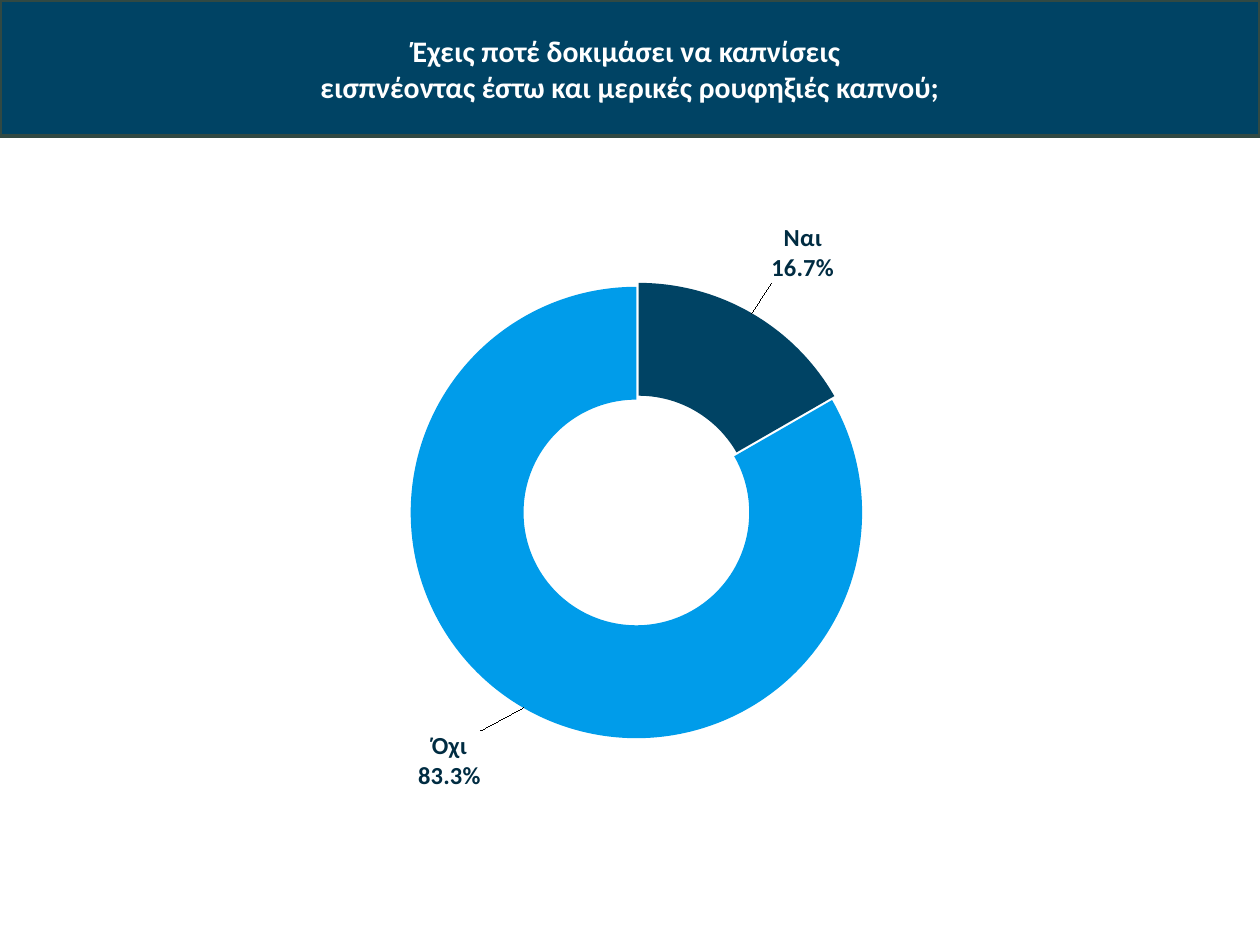
from copy import deepcopy
from dataclasses import dataclass

from pptx import Presentation
from pptx import util as u
from pptx.chart import data
from pptx.dml.color import RGBColor
from pptx.enum import chart, shapes, text
from pptx.oxml import parse_xml
from pptx.oxml.ns import nsdecls, qn


@dataclass(frozen=True)
class Theme:
    font: str = "Calibri"
    navy: str = "004364"
    blue: str = "009CEA"
    edge: str = "314943"
    ink: str = "002C42"
    white: str = "FFFFFF"
    title_size: int = 17
    label_size: int = 14
    chart_size: int = 18


class SlideBuilder:
    def __init__(self, slide, theme):
        self.s = slide
        self.theme = theme

    def style(self, font, size, color, bold=True):
        font.name = self.theme.font
        font.size = u.Pt(size)
        font.bold = bold
        font.color.rgb = RGBColor.from_string(color)

    def band(self, x, y, w, h):
        sp = self.s.shapes.add_shape(shapes.MSO_SHAPE.RECTANGLE, x, y, w, h)
        sp.shadow.inherit = False
        sp.fill.solid()
        sp.fill.fore_color.rgb = RGBColor.from_string(self.theme.navy)
        sp.line.color.rgb = RGBColor.from_string(self.theme.edge)
        sp.line.width = u.Pt(2)

    def title(self, x, y, w, h, lines):
        tf = self.s.shapes.add_textbox(x, y, w, h).text_frame
        tf.word_wrap = True
        tf.vertical_anchor = text.MSO_ANCHOR.MIDDLE
        p = tf.paragraphs[0]
        p.alignment = text.PP_ALIGN.CENTER
        for i, line in enumerate(lines):
            if i:
                p.add_line_break()
            r = p.add_run()
            r.text = line
            self.style(r.font, self.theme.title_size, self.theme.white)

    def doughnut(self, x, y, w, h, values, colors, offsets, plot_box):
        cd = data.CategoryChartData()
        cd.categories = list(values)
        cd.add_series("Series 1", list(values.values()))
        ch = self.s.shapes.add_chart(
            chart.XL_CHART_TYPE.DOUGHNUT, x, y, w, h, cd).chart
        ch.has_title = ch.has_legend = False
        self.style(ch.font, self.theme.chart_size, "000000", bold=False)
        plot = ch.plots[0]
        series = plot.series[0]
        for i, color in enumerate(colors):
            fill = series.points[i].format.fill
            fill.solid()
            fill.fore_color.rgb = RGBColor.from_string(color)
        explosion = parse_xml(f'<c:explosion {nsdecls("c")} val="4"/>')
        first_point = series.points[0].format.fill and series._element.find(qn("c:dPt"))
        first_point.find(qn("c:spPr")).addprevious(explosion)

        hole = plot._element.find(qn("c:holeSize"))
        hole.set("val", "34")
        area = ch._chartSpace.chart.plotArea
        old = area.find(qn("c:layout"))
        if old is not None:
            area.remove(old)
        area.insert(0, self.layout(*plot_box))
        self.labels(series.data_labels, offsets)

    def labels(self, labels, offsets):
        """Show category and percentage, each moved by a share of the chart."""
        labels.show_value = False
        labels.show_category_name = labels.show_percentage = True
        labels.number_format = "0.0%"
        labels.number_format_is_linked = False
        self.style(labels.font, self.theme.label_size, self.theme.ink)
        group = labels._element
        group.find(qn("c:showPercent")).addnext(
            parse_xml(f'<c:showBubbleSize {nsdecls("c")} val="0"/>'))
        for extra in group.findall(qn("c:showBubbleSize"))[1:]:
            group.remove(extra)
        group.find(qn("c:showBubbleSize")).addnext(
            parse_xml(f'<c:separator {nsdecls("c")}>\n</c:separator>'))
        shared = [e for e in group if e.tag != qn("c:showLeaderLines")]
        for i, offset in enumerate(offsets):
            label = parse_xml(f'<c:dLbl {nsdecls("c")}><c:idx val="{i}"/></c:dLbl>')
            label.append(self.layout(*offset))
            label.extend(deepcopy(e) for e in shared)
            group.insert(i, label)

    @staticmethod
    def layout(x, y, w=None, h=None):
        """Manual chart layout: a moved label, or an inner plot box if sized."""
        head = size = ""
        if w:
            head = ('<c:layoutTarget val="inner"/>'
                    '<c:xMode val="edge"/><c:yMode val="edge"/>')
            size = f'<c:w val="{w}"/><c:h val="{h}"/>'
        return parse_xml(
            f'<c:layout {nsdecls("c")}><c:manualLayout>{head}'
            f'<c:x val="{x}"/><c:y val="{y}"/>{size}</c:manualLayout></c:layout>')


def main():
    prs = Presentation()
    prs.slide_width, prs.slide_height = u.Cm(25.4), u.Cm(19.05)
    theme = Theme()
    b = SlideBuilder(prs.slides.add_slide(prs.slide_layouts[6]), theme)
    b.band(0, 0, prs.slide_width, u.Cm(2.74))
    b.title(0, 0, prs.slide_width, u.Cm(2.77),
            ["Έχεις ποτέ δοκιμάσει να καπνίσεις ",
             "εισπνέοντας έστω και μερικές ρουφηξιές καπνού;"])
    b.doughnut(u.Cm(1.4), u.Cm(3.58), u.Cm(22.86), u.Cm(14.68),
               values={"Ναι": 16.7, "Όχι": 83.3},
               colors=[theme.navy, theme.blue],
               offsets=[(0.07, -0.15), (-0.09, 0.14)],
               plot_box=(0.3, 0.15, 0.4, 0.62))
    prs.save("out.pptx")


if __name__ == "__main__":
    main()
